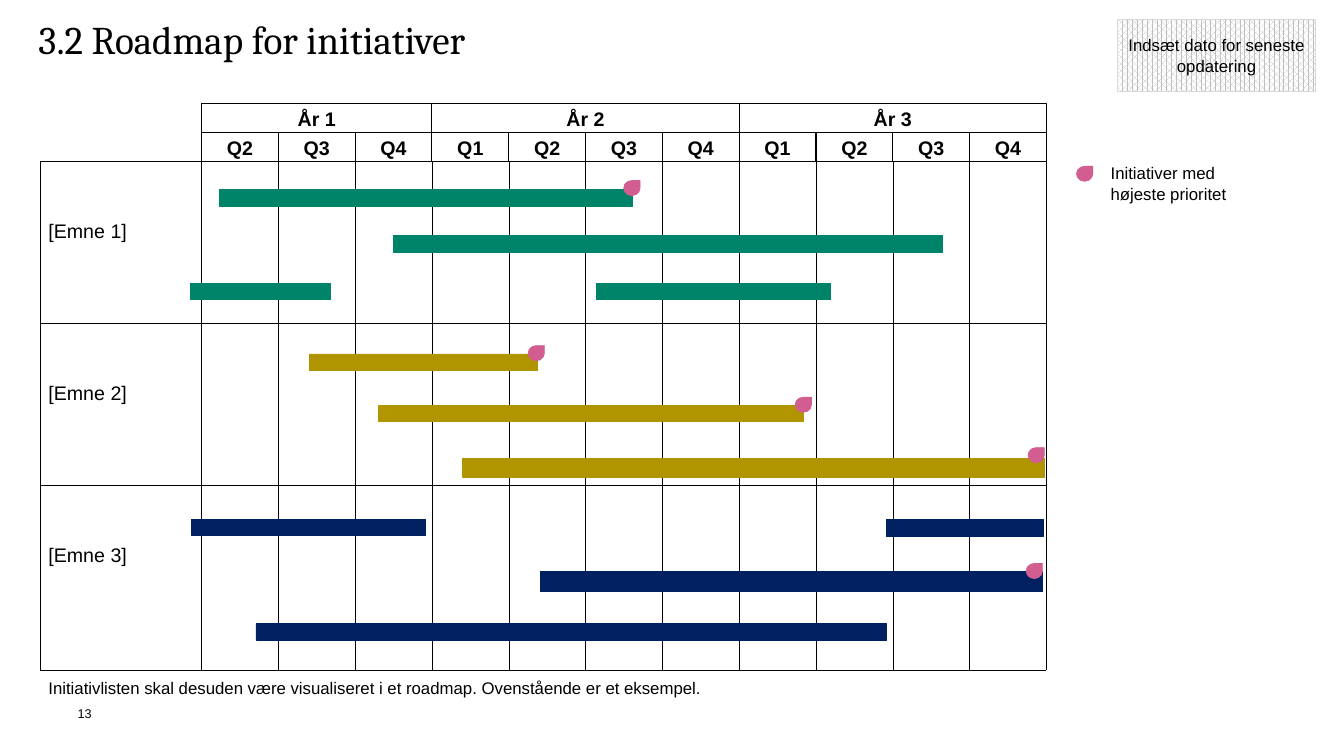
import pptx
import pptx.dml.color
import pptx.enum.dml
import pptx.enum.shapes
import pptx.enum.text
import pptx.oxml
import pptx.oxml.ns
import pptx.util

Cm = pptx.util.Cm
Pt = pptx.util.Pt
SHAPE = pptx.enum.shapes.MSO_SHAPE
ALIGN = pptx.enum.text.PP_ALIGN
ANCHOR = pptx.enum.text.MSO_ANCHOR
BLACK, GREEN, GOLD, NAVY, PINK = "000000", "008469", "B09400", "002060", "D25D90"


def color(value):
    return pptx.dml.color.RGBColor.from_string(value)


def apply(obj, values):
    for name, value in values.items():
        setattr(obj, name, value)


class Roadmap:
    body = {"name": "Arial", "size": Pt(12), "bold": False}
    label = {**body, "size": Pt(14)}
    header = {**label, "bold": True}
    number = {**body, "size": Pt(9)}
    heading = {"name": "Cambria", "size": Pt(28), "bold": False}

    def __init__(self, prs):
        self.s = prs.slides.add_slide(prs.slide_layouts[5])

    def fill_text(self, sp, text, font, align=ALIGN.LEFT, anchor=ANCHOR.TOP,
                  wrap=True, inset=(0, 0), spacing=1.0):
        tf = sp.text_frame
        apply(tf, {
            "word_wrap": wrap, "vertical_anchor": anchor,
            "auto_size": pptx.enum.text.MSO_AUTO_SIZE.NONE,
            "margin_left": Cm(inset[0]), "margin_right": Cm(inset[0]),
            "margin_top": Cm(inset[1]), "margin_bottom": Cm(inset[1]),
        })
        p = tf.paragraphs[0]
        apply(p, {"alignment": align, "line_spacing": spacing})
        r = p.add_run()
        r.text = text
        apply(r.font, font)
        r.font.color.rgb = color(BLACK)

    def title(self, x, y, w, h, text):
        sp = self.s.shapes.title
        apply(sp, {"left": Cm(x), "top": Cm(y), "width": Cm(w), "height": Cm(h)})
        self.fill_text(sp, text, self.heading, spacing=0.9)

    def text(self, x, y, w, h, text, font, wrap=True):
        sp = self.s.shapes.add_textbox(Cm(x), Cm(y), Cm(w), Cm(h))
        self.fill_text(sp, text, font, wrap=wrap)

    def shape(self, kind, x, y, w, h, fill=None, line=None, width=0.5):
        sp = self.s.shapes.add_shape(kind, Cm(x), Cm(y), Cm(w), Cm(h))
        sp.shadow.inherit = False
        if fill:
            sp.fill.solid()
            sp.fill.fore_color.rgb = color(fill)
        else:
            sp.fill.background()
        sp.line.color.rgb = color(line or fill)
        sp.line.width = Pt(width)
        return sp

    def header_cell(self, x, y, w, text):
        sp = self.shape(SHAPE.RECTANGLE, x, y, w, 0.72, line=BLACK, width=0.75)
        self.fill_text(sp, text, self.header, ALIGN.CENTER, ANCHOR.MIDDLE, False, (0, 0.08))

    def bar(self, x, y, w, h, fill):
        self.shape(SHAPE.RECTANGLE, x, y, w, h, fill)

    def marker(self, x, y):
        self.shape(SHAPE.TEAR, x, y, 0.41, 0.38, PINK)

    def date_note(self, x, y, w, h, text):
        sp = self.shape(SHAPE.RECTANGLE, x, y, w, h, line="D9D9D9")
        sp.fill.patterned()
        sp.fill.pattern = pptx.enum.dml.MSO_PATTERN.PERCENT_70
        sp.fill.fore_color.rgb = color("BFBFBF")
        sp.fill.back_color.rgb = color("FFFFFF")
        self.fill_text(sp, text, self.body, ALIGN.CENTER, ANCHOR.MIDDLE, True, (0.25, 0.13))

    def line(self, x1, y1, x2, y2, width=0.25, dotted=False):
        sp = self.s.shapes.add_connector(
            pptx.enum.shapes.MSO_CONNECTOR.STRAIGHT, Cm(x1), Cm(y1), Cm(x2), Cm(y2))
        sp.line.color.rgb = color(BLACK)
        sp.line.width = Pt(width)
        if dotted:
            sp.line.dash_style = pptx.enum.dml.MSO_LINE.ROUND_DOT
        sp.element.spPr.append(
            pptx.oxml.parse_xml(f"<a:effectLst {pptx.oxml.ns.nsdecls('a')}/>"))


YEARS = [("År 1", ("Q2", "Q3", "Q4")),
         ("År 2", ("Q1", "Q2", "Q3", "Q4")),
         ("År 3", ("Q1", "Q2", "Q3", "Q4"))]
LEFT, GRID_LEFT, GRID_RIGHT = 1.02, 5.08, 26.37
QUARTER = (GRID_RIGHT - GRID_LEFT) / sum(len(quarters) for _, quarters in YEARS)
YEAR_TOP, QUARTER_TOP, TOP, BOTTOM = 2.62, 3.35, 4.07, 16.89
ROW_LINES = [(TOP, GRID_LEFT, 0.5), (8.15, GRID_RIGHT, 0.25),
             (12.22, GRID_RIGHT, 0.25), (BOTTOM, GRID_RIGHT, 0.75)]
TOPICS = [("[Emne 1]", 5.51), ("[Emne 2]", 9.6), ("[Emne 3]", 13.69)]
BARS = {
    GREEN: [(5.54, 4.78, 10.39, 0.41), (9.91, 5.94, 13.84, 0.41),
            (4.8, 7.14, 3.53, 0.41), (15.04, 7.14, 5.89, 0.41)],
    GOLD: [(7.8, 8.92, 5.74, 0.41), (9.53, 10.21, 10.72, 0.41),
           (11.66, 11.56, 14.66, 0.46)],
    NAVY: [(4.83, 13.08, 5.89, 0.41), (22.33, 13.08, 3.96, 0.43),
           (13.61, 14.4, 12.67, 0.51), (6.45, 15.72, 15.9, 0.41)],
}
MARKERS = [(15.72, 4.55), (13.31, 8.71), (20.04, 10.01),
           (25.91, 11.28), (25.86, 14.2), (27.13, 4.19)]


def main():
    prs = pptx.Presentation()
    prs.slide_width, prs.slide_height = Cm(33.87), Cm(19.05)
    roadmap = Roadmap(prs)
    roadmap.title(0.97, 0.51, 27.5, 1.4, "3.2 Roadmap for initiativer")

    x = GRID_LEFT
    roadmap.line(LEFT, TOP, LEFT, BOTTOM, 0.75)
    for year, quarters in YEARS:
        roadmap.header_cell(x, YEAR_TOP, QUARTER * len(quarters), year)
        for i, quarter in enumerate(quarters):
            roadmap.header_cell(x, QUARTER_TOP, QUARTER, quarter)
            roadmap.line(x, TOP, x, BOTTOM, 0.75 if x == GRID_LEFT else 0.25, i > 0)
            x += QUARTER
    roadmap.line(GRID_RIGHT, TOP, GRID_RIGHT, BOTTOM)
    for y, right, width in ROW_LINES:
        roadmap.line(LEFT, y, right, y, width)

    for topic, y in TOPICS:
        roadmap.text(1.22, y, 3.6, 1.2, topic, roadmap.label, wrap=False)
    for fill, bars in BARS.items():
        for bar in bars:
            roadmap.bar(*bar, fill)
    for marker in MARKERS:
        roadmap.marker(*marker)

    roadmap.text(27.99, 4.11, 3.15, 2.84, "Initiativer med højeste prioritet", roadmap.body)
    roadmap.date_note(28.17, 0.48, 4.98, 1.83, "Indsæt dato for seneste opdatering")
    roadmap.text(1.22, 17.07, 17, 0.58,
                 "Initiativlisten skal desuden være visualiseret i et roadmap. "
                 "Ovenstående er et eksempel.", roadmap.body, wrap=False)
    roadmap.text(1.96, 17.78, 0.79, 0.76, "13", roadmap.number)
    prs.save("out.pptx")


if __name__ == "__main__":
    main()
